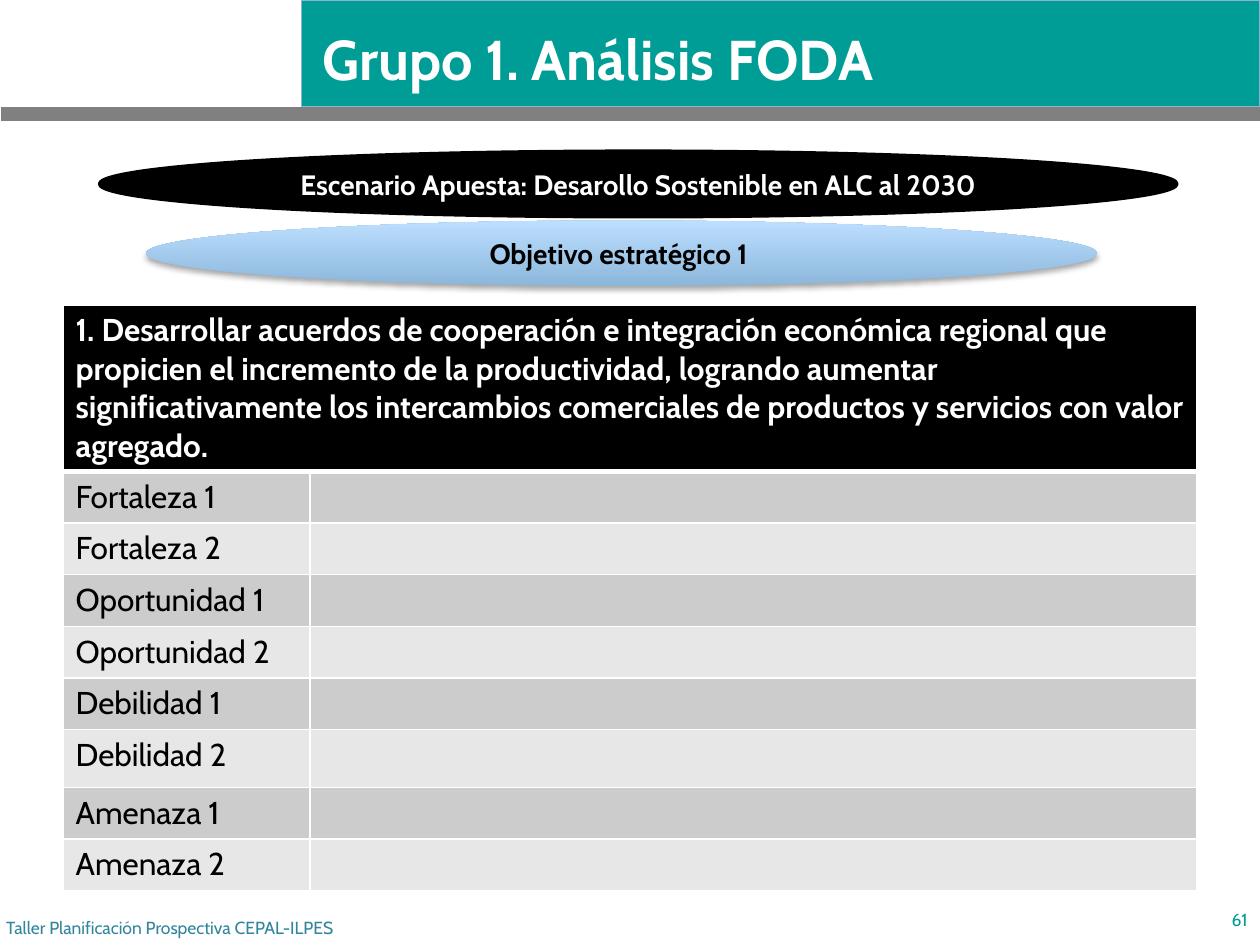
from lxml import etree
from pptx import Presentation
from pptx.dml.color import RGBColor
from pptx.enum.shapes import MSO_SHAPE
from pptx.enum.text import MSO_ANCHOR, MSO_AUTO_SIZE, PP_ALIGN
from pptx.oxml import parse_xml
from pptx.oxml.ns import nsdecls, qn
from pptx.util import Inches, Pt

RECT, ELLIPSE = MSO_SHAPE.RECTANGLE, MSO_SHAPE.OVAL
LEFT, CENTER, RIGHT = PP_ALIGN.LEFT, PP_ALIGN.CENTER, PP_ALIGN.RIGHT
MIDDLE = MSO_ANCHOR.MIDDLE
NO_AUTOFIT = MSO_AUTO_SIZE.NONE

FONT = "Cabin"
WHITE = RGBColor(0xFF, 0xFF, 0xFF)
BLACK = RGBColor(0, 0, 0)
TEAL = RGBColor(0x00, 0x9D, 0x96)
PALE_BLUE = RGBColor(0x8F, 0xB2, 0xCF)
GRAY = RGBColor(0x80, 0x80, 0x80)
FOOTER_BLUE = RGBColor(0x31, 0x85, 0x9C)
SKY_DARK = RGBColor(0x8B, 0xB7, 0xDB)
SKY_LIGHT = RGBColor(0xBD, 0xDF, 0xFF)
BANDS = [RGBColor(0xCC, 0xCC, 0xCC), RGBColor(0xE7, 0xE7, 0xE7)]

OBJECTIVE = (
    "1. Desarrollar acuerdos de cooperación e integración económica regional que "
    "propicien el incremento de la productividad, logrando aumentar significativamente "
    "los intercambios comerciales de productos y servicios con valor agregado."
)
FACTORS = ["Fortaleza", "Oportunidad", "Debilidad", "Amenaza"]


def write(tf, text, size=18, color=BLACK, bold=False, align=LEFT):
    p = tf.paragraphs[0]
    p.alignment = align
    r = p.add_run()
    r.text = text
    r.font.name = FONT
    r.font.size = Pt(size)
    r.font.bold = bold
    r.font.color.rgb = color


def place(sp, left, top, width, height):
    sp.left, sp.top = Inches(left), Inches(top)
    sp.width, sp.height = Inches(width), Inches(height)


def add_shape(s, kind, box, fill=None, line=None, line_width=1):
    sp = s.shapes.add_shape(kind, *map(Inches, box))
    sp.shadow.inherit = False
    if fill is not None:
        sp.fill.solid()
        sp.fill.fore_color.rgb = fill
    if line is None:
        sp.line.fill.background()
    else:
        sp.line.color.rgb = line
        sp.line.width = Pt(line_width)
    sp.text_frame.word_wrap = True
    sp.text_frame.vertical_anchor = MIDDLE
    return sp


def add_text(s, box, text, **fmt):
    tf = s.shapes.add_textbox(*map(Inches, box)).text_frame
    tf.word_wrap = True
    tf.vertical_anchor = MIDDLE
    write(tf, text, **fmt)


def add_title(s, text):
    title = s.shapes.title
    place(title, 2.46, -0.04, 7.41, 1)
    tf = title.text_frame
    tf.auto_size = NO_AUTOFIT
    tf.vertical_anchor = MIDDLE
    write(tf, text, size=32, color=WHITE, bold=True)


def add_gradient(sp):
    sp.fill.gradient()
    sp.fill.gradient_angle = 90
    for stop, color, position in zip(sp.fill.gradient_stops, (SKY_DARK, SKY_LIGHT), (0, 1)):
        stop.color.rgb = color
        stop.position = position


def add_shadow(sp):
    effects = sp._element.spPr.find(qn("a:effectLst"))
    effects.append(parse_xml(
        f'<a:outerShdw {nsdecls("a")} blurRad="{Pt(3.1)}" dist="{Pt(1.8)}" '
        'dir="5400000" rotWithShape="0"><a:srgbClr val="000000">'
        '<a:alpha val="35000"/></a:srgbClr></a:outerShdw>'))


def format_cell(cell, fill, top=1, bottom=1):
    tc_pr = cell._tc.get_or_add_tcPr()
    for side, width in (("L", 1), ("R", 1), ("T", top), ("B", bottom)):
        ln = etree.SubElement(tc_pr, qn(f"a:ln{side}"), w=str(Pt(width)))
        solid = etree.SubElement(ln, qn("a:solidFill"))
        etree.SubElement(solid, qn("a:srgbClr"), val=str(WHITE))
    cell.fill.solid()
    cell.fill.fore_color.rgb = fill


def add_swot_table(s):
    labels = [f"{factor} {n}" for factor in FACTORS for n in (1, 2)]
    heights = [1.28] + [0.41] * 5 + [0.46] + [0.41] * 2
    frame = s.shapes.add_table(len(heights), 2, Inches(0.5), Inches(2.42),
                               Inches(9), Inches(sum(heights)))
    table = frame.table
    for column, width in zip(table.columns, (1.96, 7.04)):
        column.width = Inches(width)
    for row, height in zip(table.rows, heights):
        row.height = Inches(height)
    header = table.cell(0, 0)
    header.merge(table.cell(0, 1))
    for col in range(2):
        format_cell(table.cell(0, col), BLACK, bottom=3)
    write(header.text_frame, OBJECTIVE, color=WHITE, bold=True)
    for i, label in enumerate(labels):
        for col in range(2):
            format_cell(table.cell(i + 1, col), BANDS[i % 2], top=1 if i else 3)
        write(table.cell(i + 1, 0).text_frame, label)


def main():
    prs = Presentation()
    prs.slide_width, prs.slide_height = Inches(10), Inches(7.5)
    s = prs.slides.add_slide(prs.slide_layouts[5])

    banner = add_shape(s, RECT, (2.39, 0, 7.61, 0.85), TEAL, PALE_BLUE, 0.75)
    rule = add_shape(s, RECT, (0.01, 0.85, 10, 0.11), GRAY)
    for sp in (banner, rule):
        s.shapes.title._element.addprevious(sp._element)
    add_title(s, "Grupo 1. Análisis FODA")

    add_swot_table(s)
    add_text(s, (-0.05, 7.16, 5.98, 0.4), "Taller Planificación Prospectiva CEPAL-ILPES",
             size=10, color=FOOTER_BLUE)
    add_text(s, (9.5, 7.1, 0.5, 0.4), "61", size=10, color=TEAL, align=RIGHT)

    scenario = add_shape(s, ELLIPSE, (0.79, 1.2, 8.55, 0.52), BLACK, BLACK, 2)
    write(scenario.text_frame, "Escenario Apuesta: Desarollo Sostenible en ALC al 2030",
          size=16, color=WHITE, bold=True, align=CENTER)
    objective = add_shape(s, ELLIPSE, (1.16, 1.75, 7.55, 0.52))
    add_gradient(objective)
    add_shadow(objective)
    write(objective.text_frame, "Objetivo estratégico 1 ", size=16, bold=True, align=CENTER)

    prs.save("out.pptx")


if __name__ == "__main__":
    main()
